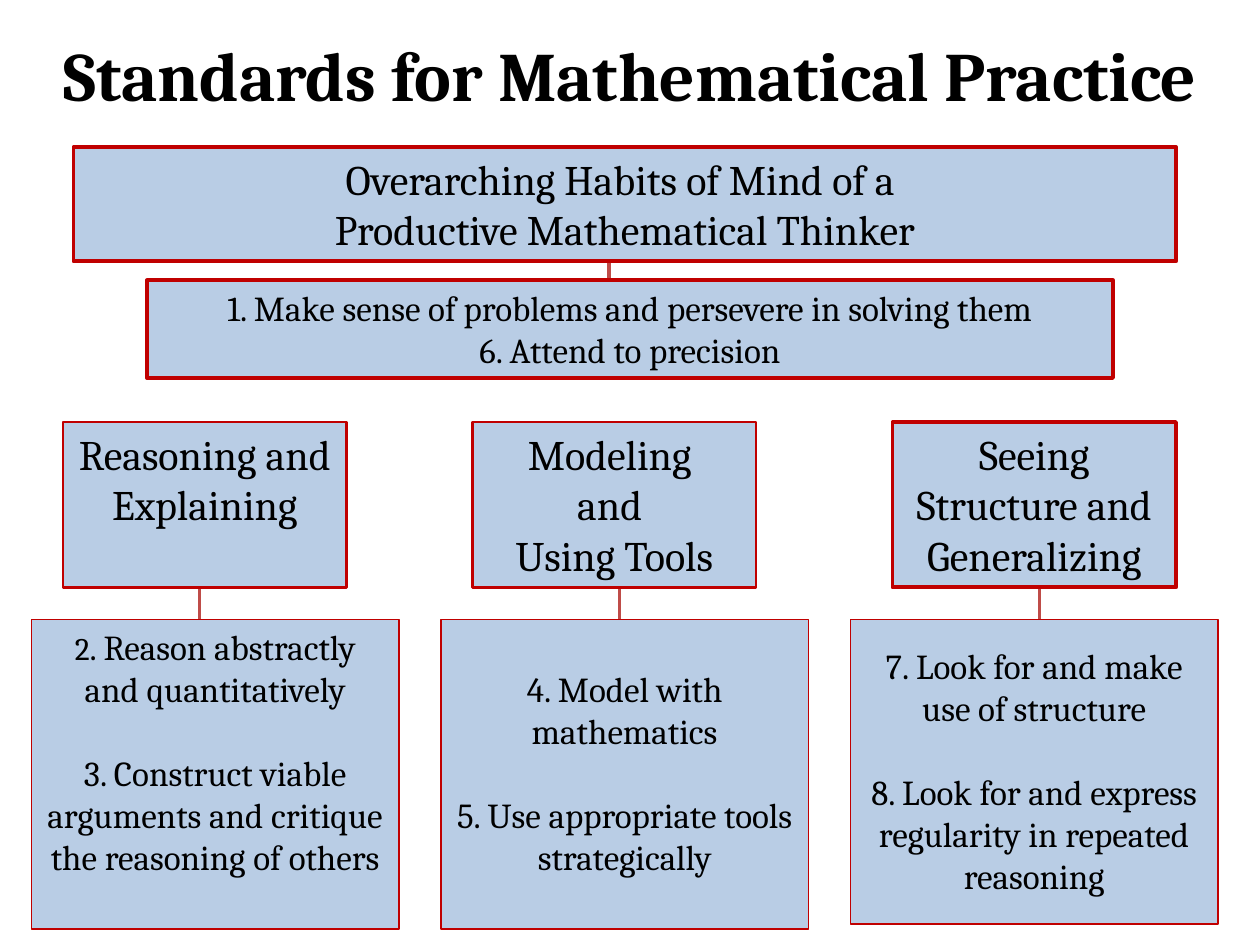
"""Build a slide that groups the Standards for Mathematical Practice."""
from lxml.etree import SubElement
from pptx import Presentation
from pptx.dml.color import RGBColor
from pptx.enum.shapes import MSO_CONNECTOR as Connector, MSO_SHAPE as Shape
from pptx.enum.text import MSO_ANCHOR as Anchor, PP_ALIGN as Align
from pptx.oxml.ns import qn
from pptx.util import Pt

BLACK = RGBColor(0x00, 0x00, 0x00)
BLUE = RGBColor(0xB9, 0xCD, 0xE5)
RED = RGBColor(0xC0, 0x00, 0x00)
LINK_RED = RGBColor(0xBF, 0x4C, 0x48)
FONT = "Cambria"


def format_run(run, size, bold=False):
    for name, value in {"name": FONT, "size": Pt(size), "bold": bold}.items():
        setattr(run.font, name, value)
    run.font.color.rgb = BLACK


def add_box(position, border, size, paragraphs, gap=0, top_inset=3.6):
    box = slide.shapes.add_shape(Shape.RECTANGLE, *map(Pt, position))
    box.shadow.inherit = False
    box.fill.solid()
    box.fill.fore_color.rgb = BLUE
    box.line.color.rgb = RED
    box.line.width = Pt(border)
    frame = box.text_frame
    frame_format = {"word_wrap": True, "vertical_anchor": Anchor.TOP, "margin_top": Pt(top_inset)}
    for name, value in frame_format.items():
        setattr(frame, name, value)
    for index, text in enumerate(paragraphs):
        paragraph = frame.add_paragraph() if index else frame.paragraphs[0]
        paragraph.alignment = Align.CENTER
        if index:
            paragraph.space_before = Pt(gap)
        run = paragraph.add_run()
        run.text = text
        format_run(run, size)
    return box


presentation = Presentation()
presentation.slide_width, presentation.slide_height = Pt(720), Pt(540)
slide = presentation.slides.add_slide(presentation.slide_layouts[5])

title = slide.shapes.title
title_format = {"left": Pt(0), "top": Pt(6), "width": Pt(720), "height": Pt(72)}
for name, value in title_format.items():
    setattr(title, name, value)
title.text_frame.vertical_anchor = Anchor.MIDDLE
title_paragraph = title.text_frame.paragraphs[0]
title_paragraph.alignment = Align.CENTER
title_run = title_paragraph.add_run()
title_run.text = "Standards for Mathematical Practice"
format_run(title_run, 39.6, bold=True)

links = [(348, 138, 168)] + [(114 + 240 * column, 324, 354) for column in range(3)]
for x, top, bottom in links:
    link = slide.shapes.add_connector(Connector.STRAIGHT, Pt(x), Pt(top), Pt(x), Pt(bottom))
    link.line.color.rgb = LINK_RED
    link.line.width = Pt(2.25)
    SubElement(link._element.spPr, qn("a:effectLst"))

add_box((42, 84, 630, 65.4), 2.25, 24,
        ["Overarching Habits of Mind of a ", "Productive Mathematical Thinker"])
add_box((84, 160.2, 552, 55.8), 2.25, 20,
        ["1. Make sense of problems and persevere in solving them", "6. Attend to precision"])

headings = [
    (36, 1.5, ["Reasoning and Explaining"]),
    (270, 1.5, ["Modeling ", "and ", "Using Tools"]),
    (510, 2.25, ["Seeing Structure and Generalizing"]),
]
for left, border, paragraphs in headings:
    add_box((left, 241.2, 162, 94.5), border, 24, paragraphs)

practices = [
    (177, 3.6, ["2", "3. Construct viable arguments and critique the reasoning of others"]),
    (177, 27.6, ["4. Model with mathematics", "5. Use appropriate tools strategically"]),
    (174, 14.4, ["7. Look for and make use of structure",
                 "8. Look for and express regularity in repeated reasoning"]),
]
practice_boxes = [
    add_box((18 + 234 * column, 354, 210, height), 0.75, 20, paragraphs, 24, top_inset)
    for column, (height, top_inset, paragraphs) in enumerate(practices)
]
first_practice = practice_boxes[0].text_frame.paragraphs[0]
first_practice.runs[0].font.size = Pt(18)
wording = first_practice.add_run()
wording.text = ". Reason abstractly and quantitatively"
format_run(wording, 20)

presentation.save("out.pptx")
